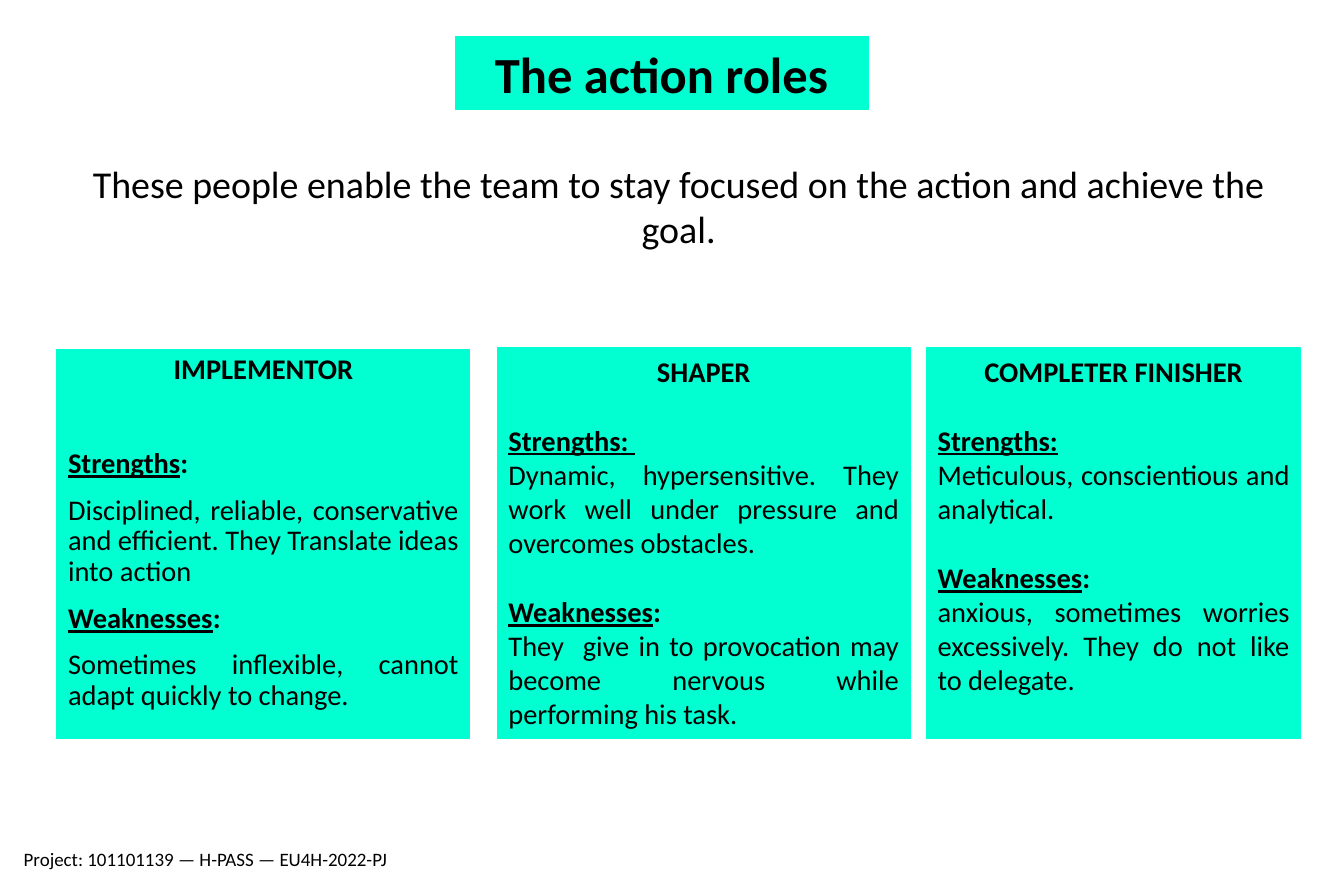
from dataclasses import dataclass

from pptx import Presentation
from pptx import util as u
from pptx.dml import color
from pptx.enum import shapes, text


@dataclass(frozen=True)
class Theme:
    """Colours, font and type sizes of the slide."""
    panel: color.RGBColor = color.RGBColor(0x02, 0xFF, 0xD2)
    ink: color.RGBColor = color.RGBColor(0, 0, 0)
    font: str = "Calibri"
    title: int = 32
    lead: int = 24
    body: int = 18
    footer: int = 12


@dataclass(frozen=True)
class Role:
    """Wording and spacing of one team role."""
    name: str
    strengths_label: tuple
    strengths: str
    weaknesses_label: tuple
    weaknesses: str
    line_spacing: float
    gaps: tuple


THEME = Theme()
CARD_BOXES = [(1.27, 7.8, 9.22, 8.69), (11.1, 7.77, 9.22, 8.72), (20.68, 7.77, 8.36, 8.72)]
ROLES = [
    Role("IMPLEMENTOR", ("Strengths", ": "),
         "Disciplined, reliable, conservative and efficient. They Translate ideas into action",
         ("Weaknesses", ": "), "Sometimes inflexible, cannot adapt quickly to change.",
         0.9, (40, 10, 10, 10)),
    Role("SHAPER", ("Strengths: ", ""),
         "Dynamic, hypersensitive. They work well under pressure and overcomes obstacles.",
         ("Weaknesses", ":"),
         "They  give in to provocation may become nervous while performing his task.",
         1.0, (22, 0, 22, 0)),
    Role("COMPLETER FINISHER", ("Strengths:", ""),
         "Meticulous, conscientious and analytical.",
         ("Weaknesses", ": "),
         "anxious, sometimes worries excessively. They do not like to delegate.",
         1.0, (22, 0, 22, 0)),
]


def place(part, box):
    """Move a part to a box given in centimetres."""
    part.left, part.top, part.width, part.height = map(u.Cm, box)


def paint(part):
    """Give a part the panel fill and outline."""
    part.fill.solid()
    part.fill.fore_color.rgb = THEME.panel
    part.line.color.rgb = THEME.panel
    part.line.width = u.Pt(0.75)


def prepare(frame, anchor=text.MSO_ANCHOR.TOP):
    """Set wrapping and anchoring, and return the first paragraph."""
    frame.word_wrap = True
    frame.auto_size = text.MSO_AUTO_SIZE.NONE
    frame.vertical_anchor = anchor
    return frame.paragraphs[0]


def write(paragraph, words, size, bold=False, underline=False):
    """Add one formatted run."""
    run = paragraph.add_run()
    run.text = words
    run.font.name = THEME.font
    run.font.size = u.Pt(size)
    run.font.color.rgb = THEME.ink
    run.font.bold = bold
    run.font.underline = underline


def add_title(slide, box, words):
    """Place the slide title on its panel."""
    title = slide.shapes.title
    place(title, box)
    paint(title)
    heading = prepare(title.text_frame, text.MSO_ANCHOR.MIDDLE)
    heading.alignment = text.PP_ALIGN.CENTER
    write(heading, words, THEME.title, bold=True)


def add_note(slide, box, words, size, alignment):
    """Place a plain line of text."""
    note = slide.shapes.add_textbox(*map(u.Cm, box))
    line = prepare(note.text_frame)
    line.alignment = alignment
    write(line, words, size)


def add_role(slide, box, role):
    """Place a role card with its strengths and weaknesses."""
    card = slide.shapes.add_shape(shapes.MSO_SHAPE.RECTANGLE, *map(u.Cm, box))
    card.shadow.inherit = False
    paint(card)
    heading = prepare(card.text_frame)
    heading.alignment = text.PP_ALIGN.CENTER
    heading.line_spacing = role.line_spacing
    write(heading, role.name, THEME.body, bold=True)
    entries = [role.strengths_label, role.strengths, role.weaknesses_label, role.weaknesses]
    for entry, gap in zip(entries, role.gaps):
        line = card.text_frame.add_paragraph()
        line.alignment = text.PP_ALIGN.JUSTIFY
        line.line_spacing = role.line_spacing
        line.space_before = u.Pt(gap)
        if isinstance(entry, str):
            write(line, entry, THEME.body)
            continue
        label, ending = entry
        write(line, label, THEME.body, bold=True, underline=True)
        if ending:
            write(line, ending, THEME.body, bold=True)


def main():
    """Build and save the slide."""
    deck = Presentation()
    deck.slide_width, deck.slide_height = u.Cm(30), u.Cm(20)
    slide = deck.slides.add_slide(deck.slide_layouts.get_by_name("Title Only"))
    add_note(slide, (0.28, 18.8, 9.22, 0.69), "Project: 101101139 — H-PASS — EU4H-2022-PJ",
             THEME.footer, text.PP_ALIGN.LEFT)
    add_title(slide, (10.16, 0.81, 9.22, 1.63), "The action roles")
    add_note(slide, (1.27, 3.45, 27.76, 2.31),
             "These people enable the team to stay focused on the action and achieve the goal.",
             THEME.lead, text.PP_ALIGN.CENTER)
    for box, role in zip(CARD_BOXES, ROLES):
        add_role(slide, box, role)
    deck.save("out.pptx")


if __name__ == "__main__":
    main()
